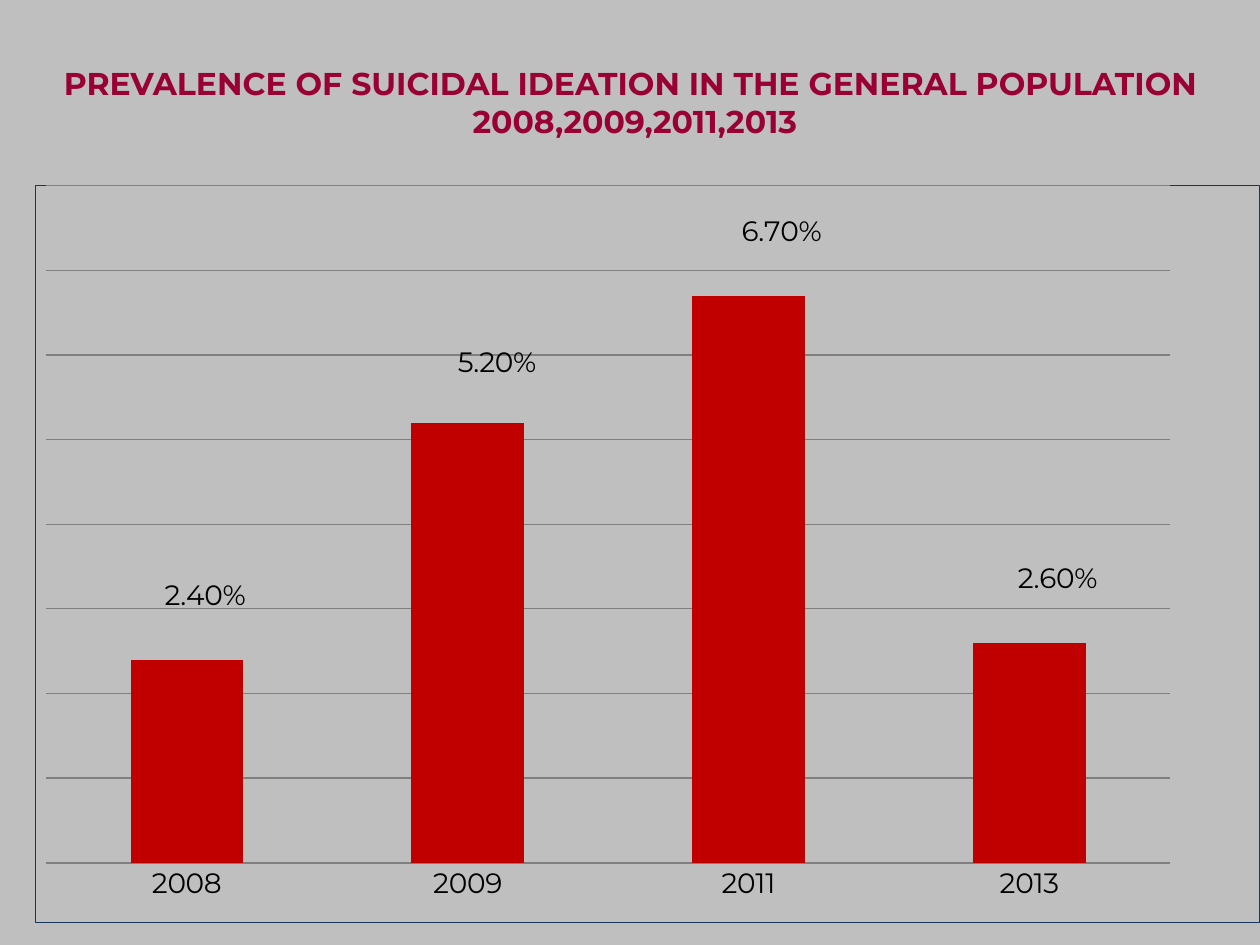
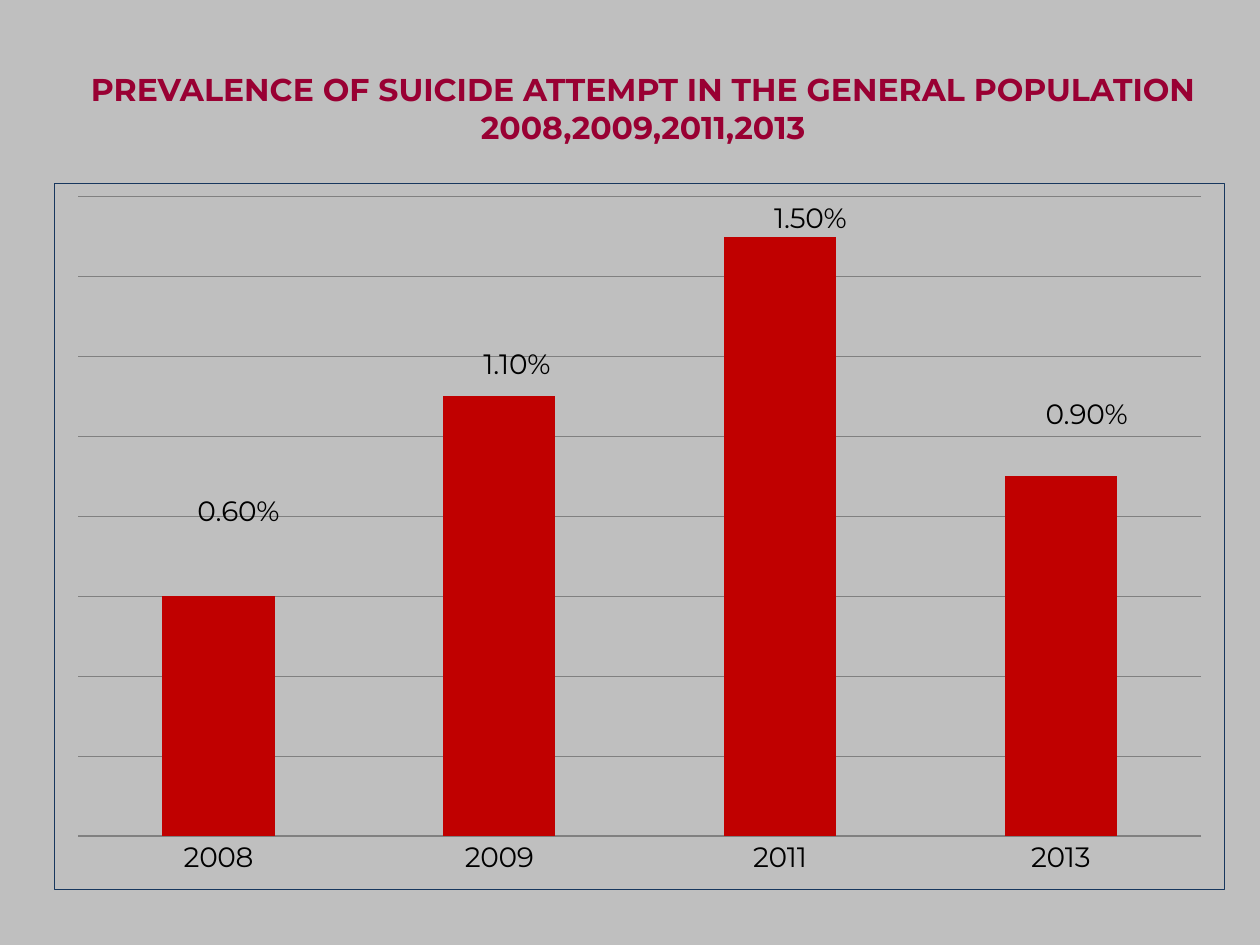
from dataclasses import dataclass

from lxml.etree import SubElement
from pptx import Presentation
from pptx.chart.chart import Chart
from pptx.chart.data import CategoryChartData
from pptx.dml.color import RGBColor
from pptx.enum.chart import XL_CHART_TYPE, XL_LABEL_POSITION, XL_TICK_MARK
from pptx.enum.text import MSO_ANCHOR, PP_ALIGN
from pptx.oxml import parse_xml
from pptx.oxml.ns import nsdecls, qn
from pptx.slide import Slide
from pptx.util import Cm, Pt


@dataclass(frozen=True)
class Theme:
    font: str = "Montserrat"
    back: str = "BFBFBF"
    title: str = "990033"
    bar: str = "C00000"
    grid: str = "808080"
    edge: str = "17375E"
    ink: str = "000000"
    head: int = 18
    label: int = 16


@dataclass(frozen=True)
class Box:
    left: float
    top: float
    width: float
    height: float

    def place(self) -> tuple:
        return Cm(self.left), Cm(self.top), Cm(self.width), Cm(self.height)


@dataclass(frozen=True)
class Page:
    title: str
    head: Box
    frame: Box
    kind: XL_CHART_TYPE
    spot: XL_LABEL_POSITION
    rates: tuple
    top: float      # end of the value axis
    step: float     # distance between grid lines
    plot: tuple     # inner plot area, percent of the chart
    shifts: tuple   # label offsets, percent of the chart


THEME = Theme()
YEARS = ("2008", "2009", "2011", "2013")

PAGES = (
    Page("PREVALENCE OF SUICIDAL IDEATION IN THE GENERAL POPULATION \v2008,2009,2011,2013",
         Box(0.2, 1.02, 25.2, 2.08), Box(0.7, 3.73, 24.7, 14.88),
         XL_CHART_TYPE.COLUMN_CLUSTERED, XL_LABEL_POSITION.OUTSIDE_END,
         (0.024, 0.052, 0.067, 0.026), 0.08, 0.01,
         (0.9, 0, 91.8, 91.9),
         ((1.5, -5.8), (2.4, -5.2), (2.7, -5.8), (2.3, -5.8))),
    Page("PREVALENCE OF SUICIDE ATTEMPT IN THE GENERAL POPULATION 2008,2009,2011,2013",
         Box(0.76, 0.66, 24.41, 3.02), Box(1.09, 3.68, 23.61, 14.26),
         XL_CHART_TYPE.COLUMN_STACKED, XL_LABEL_POSITION.CENTER,
         (0.006, 0.011, 0.015, 0.009), 0.016, 0.002,
         (2, 1.9, 96, 90.6),
         ((1.7, -29), (1.5, -35.6), (2.6, -45), (2.2, -34.2))),
)


def style(font, size: int, color: str, bold: bool = False) -> None:
    font.name, font.size, font.bold = THEME.font, Pt(size), bold
    font.color.rgb = RGBColor.from_string(color)


def write(slide: Slide, text: str, box: Box, *, size: int, color: str,
          bold: bool = False, align: PP_ALIGN = PP_ALIGN.CENTER) -> None:
    frame = slide.shapes.add_textbox(*box.place()).text_frame
    frame.word_wrap = True
    frame.vertical_anchor = MSO_ANCHOR.MIDDLE
    para = frame.paragraphs[0]
    para.text, para.alignment = text, align
    for run in para.runs:
        style(run.font, size, color, bold)


def rule(line, color: str, width: float) -> None:
    line.color.rgb = RGBColor.from_string(color)
    line.width = Pt(width)


def layout(**parts):
    """Make a manual chart layout from tag values."""
    node = parse_xml(f"<c:layout {nsdecls('c')}><c:manualLayout/></c:layout>")
    for tag, value in parts.items():
        SubElement(node[0], qn(f"c:{tag}")).set("val", str(value))
    return node


def arrange(chart: Chart, page: Page) -> None:
    """Set the plot area, the label offsets and the chart border."""
    root = chart.element
    area = root.find(f".//{qn('c:plotArea')}")
    for old in area.findall(qn("c:layout")):
        area.remove(old)
    x, y, w, h = (round(part / 100, 3) for part in page.plot)
    area.insert(0, layout(layoutTarget="inner", xMode="edge", yMode="edge",
                          x=x, y=y, w=w, h=h))
    for label, (x, y) in zip(root.iter(qn("c:dLbl")), page.shifts):
        label.insert(1, layout(x=round(x / 100, 3), y=round(y / 100, 3)))
    # Moved labels get no leader lines
    for leader in root.iter(qn("c:showLeaderLines")):
        leader.set("val", "0")
    root.find(qn("c:chart")).addnext(parse_xml(
        f"<c:spPr {nsdecls('c', 'a')}><a:noFill/><a:ln w='{Pt(0.75)}'><a:solidFill>"
        f"<a:srgbClr val='{THEME.edge}'/></a:solidFill></a:ln></c:spPr>"))


def draw(slide: Slide, page: Page) -> None:
    data = CategoryChartData(number_format="0.00%")
    data.categories = YEARS
    data.add_series("Series 1", page.rates)
    chart = slide.shapes.add_chart(page.kind, *page.frame.place(), data).chart
    chart.has_legend = chart.has_title = False
    style(chart.font, THEME.label, THEME.ink)

    # Axes
    years, scale = chart.category_axis, chart.value_axis
    years.major_tick_mark = years.minor_tick_mark = XL_TICK_MARK.NONE
    style(years.tick_labels.font, THEME.label, THEME.ink)
    rule(years.format.line, THEME.grid, 1)
    scale.visible = False
    scale.minimum_scale, scale.maximum_scale = 0, page.top
    scale.major_unit = page.step
    scale.has_major_gridlines = True
    rule(scale.major_gridlines.format.line, THEME.grid, 0.75)

    # Bars and their labels
    plot = chart.plots[0]
    plot.gap_width, plot.vary_by_categories = 150, False
    bars = plot.series[0]
    bars.format.fill.solid()
    bars.format.fill.fore_color.rgb = RGBColor.from_string(THEME.bar)
    for index in range(len(YEARS)):
        label = bars.points[index].data_label
        label.position = page.spot
        style(label.font, THEME.label, THEME.ink)
    arrange(chart, page)


def main() -> None:
    deck = Presentation()
    deck.slide_width, deck.slide_height = Cm(25.4), Cm(19.05)
    for page in PAGES:
        slide = deck.slides.add_slide(deck.slide_layouts[6])
        fill = slide.background.fill
        fill.solid()
        fill.fore_color.rgb = RGBColor.from_string(THEME.back)
        write(slide, page.title, page.head, size=THEME.head,
              color=THEME.title, bold=True)
        draw(slide, page)
    deck.save("out.pptx")


if __name__ == "__main__":
    main()
